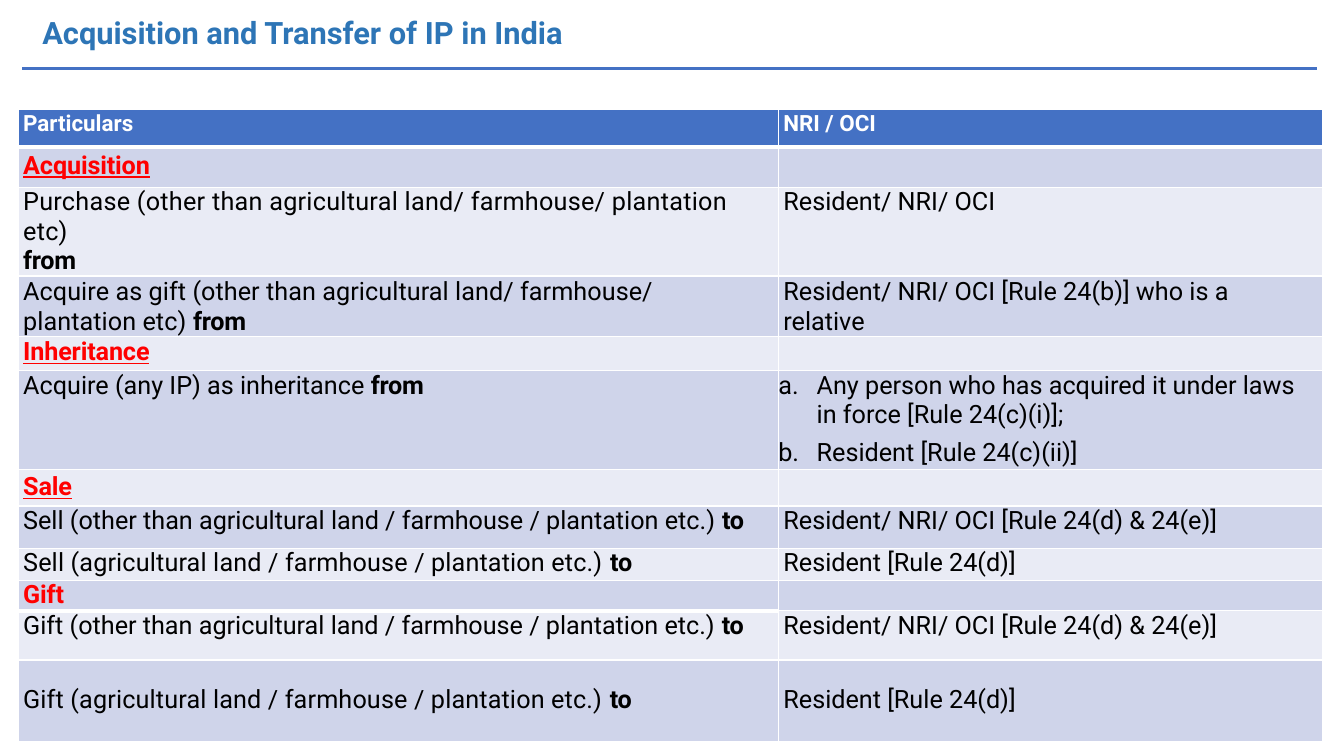
from lxml.etree import SubElement
from pptx import Presentation
from pptx.dml.color import RGBColor
from pptx.enum.shapes import MSO_CONNECTOR as CONN
from pptx.enum.text import MSO_ANCHOR as ANCHOR, MSO_AUTO_SIZE as AUTOSIZE, PP_ALIGN as ALIGN
from pptx.oxml.ns import qn
from pptx.util import Emu, Pt

PX = 9144  # 100 px to the inch
FONT = "Roboto"
TITLE_BLUE = RGBColor(0x2D, 0x75, 0xB6)
BLUE = RGBColor(0x44, 0x71, 0xC4)
WHITE = RGBColor(0xFF, 0xFF, 0xFF)
BLACK = RGBColor(0x00, 0x00, 0x00)
RED = RGBColor(0xFF, 0x00, 0x00)
BAND_DARK = RGBColor(0xCF, 0xD4, 0xEA)
BAND_LIGHT = RGBColor(0xE9, 0xEB, 0xF5)

COLUMNS = [754, 540]
# Row height, top inset, line spacing in points, left text, bold ending, right paragraphs.
# A row without right paragraphs is a section heading.
ROWS = [
    (40, 4, None, "Acquisition", "", []),
    (61, 0, 21.1, "Purchase (other than agricultural land/ farmhouse/ plantation etc)", "\nfrom",
     ["Resident/ NRI/ OCI"]),
    (60, 0, 21.6, "Acquire as gift (other than agricultural land/ farmhouse/ plantation etc) ", "from",
     ["Resident/ NRI/ OCI [Rule 24(b)] who is a relative"]),
    (34, 1, None, "Inheritance", "", []),
    (98, 0, 21.2, "Acquire (any IP) as inheritance ", "from",
     ["Any person who has acquired it under laws in force [Rule 24(c)(i)];",
      "Resident [Rule 24(c)(ii)]"]),
    (36, 3, None, "Sale", "", []),
    (42, 0, 21.2, "Sell (other than agricultural land / farmhouse / plantation etc.) ", "to",
     ["Resident/ NRI/ OCI [Rule 24(d) & 24(e)]"]),
    (32, 0, None, "Sell (agricultural land / farmhouse / plantation etc.) ", "to",
     ["Resident [Rule 24(d)]"]),
    (30, 0, 20.6, "Gift", "", []),
    (49, 0, 21.3, "Gift (other than agricultural land / farmhouse / plantation etc.) ", "to",
     ["Resident/ NRI/ OCI [Rule 24(d) & 24(e)]"]),
    (81, 25, None, "Gift (agricultural land / farmhouse / plantation etc.) ", "to",
     ["Resident [Rule 24(d)]"]),
]
HEADER_HEIGHT = 37
# Extra letter spacing, in hundredths of a point
LOOSE = {"Purchase": 20, "Sell (agri": 10, "Gift (agri": 10, "Acquire as": 5}


class Slide:
    def __init__(self, prs):
        self.s = prs.slides.add_slide(prs.slide_layouts[5])

    def style(self, r, size, color, bold=False, underline=False, spacing=0):
        f = r.font
        f.name, f.size, f.bold = FONT, Pt(size), bold
        f.color.rgb = color
        if underline:
            f.underline = True
        if spacing:
            r._r.get_or_add_rPr().set("spc", str(spacing))

    def title(self, x, y, w, h, text):
        sp = self.s.shapes.title
        sp.left, sp.top, sp.width, sp.height = (Emu(v * PX) for v in (x, y, w, h))
        tf = sp.text_frame
        tf.text = text
        tf.word_wrap, tf.auto_size = True, AUTOSIZE.NONE
        tf.vertical_anchor = ANCHOR.TOP
        tf.margin_left, tf.margin_top = Emu(6 * PX), Emu(10 * PX)
        tf.margin_right = tf.margin_bottom = 0
        p = tf.paragraphs[0]
        p.alignment, p.line_spacing = ALIGN.LEFT, 1.0
        self.style(p.runs[0], 22, TITLE_BLUE, True)

    def rule(self, x1, x2, y):
        c = self.s.shapes.add_connector(CONN.STRAIGHT, x1 * PX, y * PX, x2 * PX, y * PX)
        c.line.color.rgb, c.line.width = BLUE, Pt(2.16)
        SubElement(c._element.spPr, qn("a:effectLst"))

    def block(self, x, y, w, h):
        fb = self.s.shapes.build_freeform(x, y, scale=PX)
        fb.add_line_segments([(x + w, y), (x + w, y + h), (x, y + h)], close=True)
        sp = fb.convert_to_shape()
        sp.shadow.inherit = False
        sp.fill.solid()
        sp.fill.fore_color.rgb = BLUE
        sp.line.fill.background()

    def table(self, x, y, columns, heights):
        t = self.s.shapes.add_table(len(heights), len(columns), x * PX, y * PX,
                                    sum(columns) * PX, sum(heights) * PX).table
        t.first_row = t.horz_banding = False
        for col, w in zip(t.columns, columns):
            col.width = Emu(w * PX)
        for row, h in zip(t.rows, heights):
            row.height = Emu(h * PX)
        return t

    def cell(self, cell, fill, top=0, thick=""):
        """Set insets, white borders (3 pt on the sides in thick) and fill."""
        cell.margin_left = cell.margin_bottom = 0
        cell.margin_top, cell.margin_right = Emu(top * PX), Emu(20 * PX)
        tcPr = cell._tc.get_or_add_tcPr()
        for side in "LRTB":
            ln = SubElement(tcPr, qn(f"a:ln{side}"), w=str(Pt(3 if side in thick else 1)))
            SubElement(SubElement(ln, qn("a:solidFill")), qn("a:srgbClr"), val=str(WHITE))
        if fill is None:
            cell.fill.background()
        else:
            cell.fill.solid()
            cell.fill.fore_color.rgb = fill

    def cell_text(self, cell, paragraphs, leading=None, numbered=False):
        """Each paragraph is a list of (text, style) runs."""
        tf = cell.text_frame
        for i, runs in enumerate(paragraphs):
            p = tf.add_paragraph() if i else tf.paragraphs[0]
            if leading:
                p.line_spacing = Pt(leading)
            pPr = p._p.get_or_add_pPr()
            pPr.set("marL", str((38 if numbered else 5) * PX))
            pPr.set("indent", str(-38 * PX if numbered else 0))
            if numbered:
                p.space_before = Pt(5.3 if i else 0.3)
                SubElement(pPr, qn("a:buFont"), typeface=FONT)
                SubElement(pPr, qn("a:buAutoNum"), type="alphaLcPeriod")
            for text, style in runs:
                r = p.add_run()
                r.text = text
                self.style(r, **style)
        if not paragraphs:
            SubElement(tf.paragraphs[0]._p, qn("a:endParaRPr"), sz="1200")


def main():
    prs = Presentation()
    prs.slide_width, prs.slide_height = Emu(1333 * PX), Emu(750 * PX)
    slide = Slide(prs)

    # Heading
    slide.rule(22, 1306, 68)
    slide.title(36, 4, 1261, 45, "Acquisition and Transfer of IP in India")

    # Table header
    slide.block(18, 109, 754, HEADER_HEIGHT)
    t = slide.table(18, 109, COLUMNS, [HEADER_HEIGHT] + [row[0] for row in ROWS])
    head = dict(size=16, color=WHITE, bold=True)
    for c, (text, fill) in enumerate([("Particulars", None), ("NRI / OCI", BLUE)]):
        slide.cell(t.cell(0, c), fill, 1, thick="B")
        slide.cell_text(t.cell(0, c), [[(text, head)]])

    # Table body
    plain = dict(size=18, color=BLACK)
    strong = dict(plain, bold=True, spacing=-20)
    for i, (_, top, leading, text, ending, right) in enumerate(ROWS, 1):
        fill = BAND_DARK if i % 2 else BAND_LIGHT
        left_cell, right_cell = t.cell(i, 0), t.cell(i, 1)
        above = "T" if i == 1 else ""
        gift_edge = {"Gift": "B", "Gift (other": "T"}.get(text.split(" than")[0], "")
        slide.cell(left_cell, fill, top, above + gift_edge)
        slide.cell(right_cell, fill, top if right else 0, above)
        if right:
            loose = next((v for k, v in LOOSE.items() if text.startswith(k)), 0)
            body = [(text, dict(plain, spacing=loose))]
            tail = [(ending.strip(), strong)]
            left = [body, tail] if ending.startswith("\n") else [body + tail]
        else:
            left = [[(text, dict(size=18, color=RED, bold=True, underline=text != "Gift",
                                 spacing=-10))]]
        slide.cell_text(left_cell, left, leading)
        slide.cell_text(right_cell, [[(line, plain)] for line in right], leading, len(right) > 1)

    prs.save("out.pptx")


if __name__ == "__main__":
    main()
